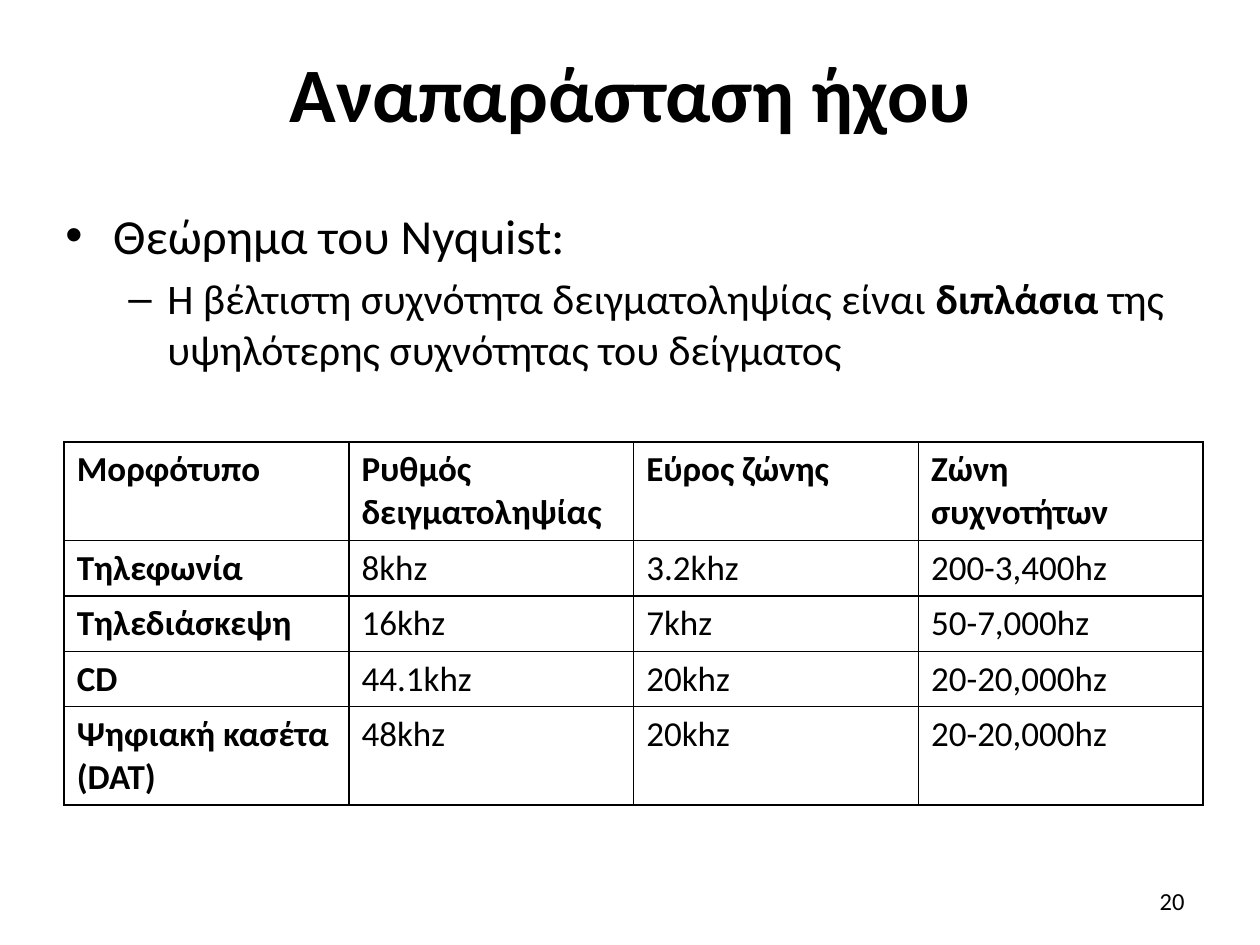
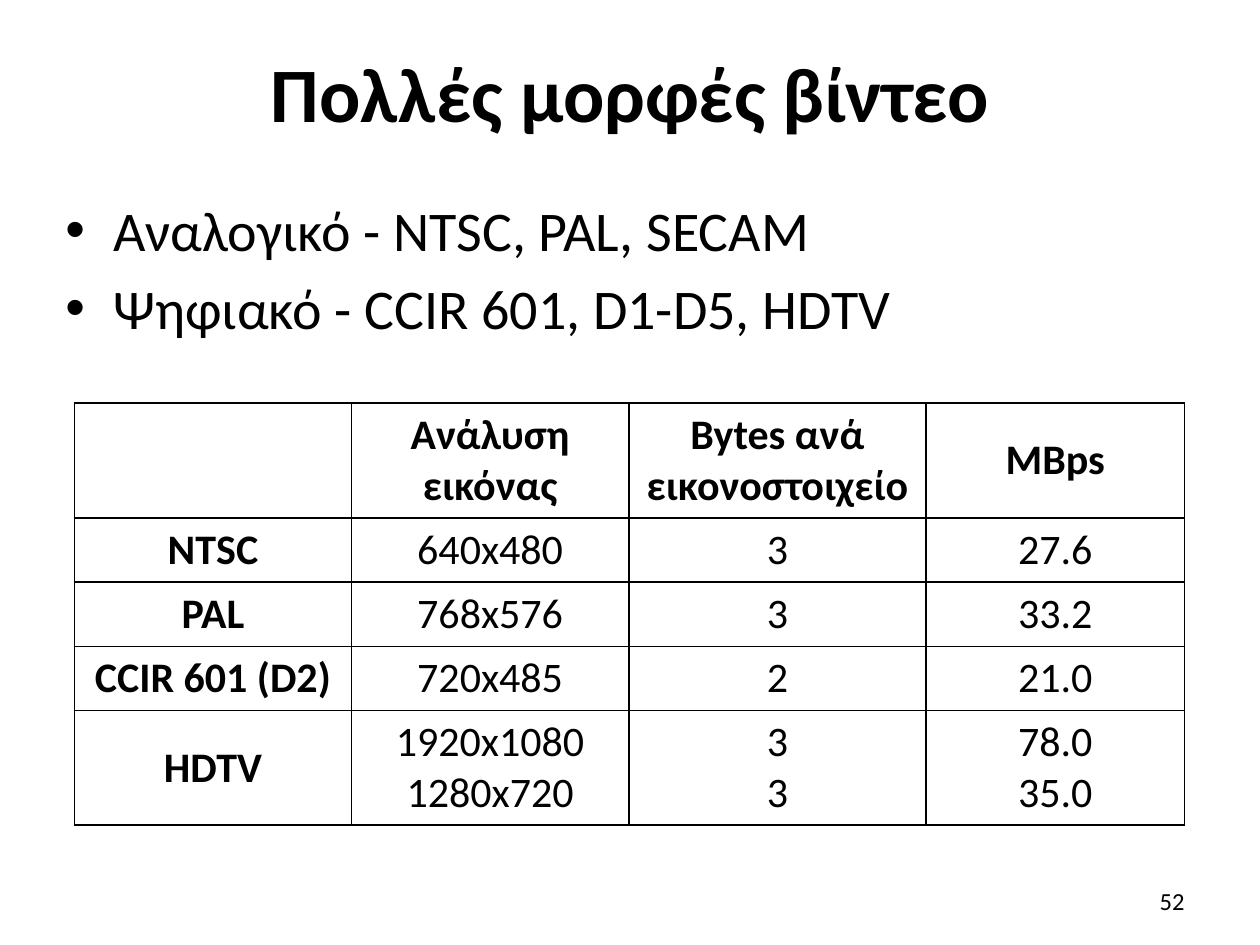
from lxml import etree
from pptx import Presentation
from pptx.dml.color import RGBColor
from pptx.enum.text import MSO_ANCHOR as Anchor, PP_ALIGN as Align
from pptx.oxml import parse_xml
from pptx.oxml.ns import nsdecls, qn
from pptx.util import Inches, Pt

FONT = "Calibri"
BLACK = "000000"
BULLETS = [("•", 0.38, -0.38), ("–", 0.81, -0.31)]  # mark, margin, indent by level

# Each bullet is (level, size, space before, runs); each run is (text, bold).
SLIDES = [
    {
        "title": "Αναπαράσταση ήχου",
        "number": "20",
        "body_top": 1.58, "body_height": 1.7,
        "bullets": [
            (0, 28, 0, [("Θεώρημα του Nyquist:", False)]),
            (1, 24, 5, [("H βέλτιστη συχνότητα δειγματοληψίας είναι ", False),
                        ("διπλάσια ", True),
                        ("της υψηλότερης συχνότητας του δείγματος", False)]),
        ],
        "table_at": (0.51, 3.51),
        "columns": [2.26] * 4,
        "row_heights": [0.78, 0.44, 0.44, 0.44, 0.78],
        "cell_size": 20, "cell_align": Align.LEFT, "cell_anchor": Anchor.TOP,
        "rows": [
            ["Μορφότυπο", "Ρυθμός δειγματοληψίας", "Εύρος ζώνης", "Ζώνη συχνοτήτων"],
            ["Τηλεφωνία", "8khz", "3.2khz", "200-3,400hz"],
            ["Τηλεδιάσκεψη", "16khz", "7khz", "50-7,000hz"],
            ["CD", "44.1khz", "20khz", "20-20,000hz"],
            ["Ψηφιακή κασέτα (DAT)", "48khz", "20khz", "20-20,000hz"],
        ],
    },
    {
        "title": "Πολλές μορφές βίντεο",
        "number": "52",
        "body_top": 1.5, "body_height": 1.5,
        "bullets": [
            (0, 32, 0, [("Αναλογικό - NTSC, PAL, SECAM", False)]),
            (0, 32, 6.4, [("Ψηφιακό - CCIR 601, D1-D5, HDTV", False)]),
        ],
        "table_at": (0.59, 3.2),
        "columns": [2.2, 2.2, 2.36, 2.05],
        "row_heights": [0.91, 0.51, 0.51, 0.51, 0.91],
        "cell_size": 24, "cell_align": Align.CENTER, "cell_anchor": Anchor.MIDDLE,
        "rows": [
            ["", "Ανάλυση εικόνας", "Bytes ανά εικονοστοιχείο", "MBps"],
            ["ΝΤSC", "640x480", "3", "27.6"],
            ["PAL", "768x576", "3", "33.2"],
            ["CCIR 601 (D2)", "720x485", "2", "21.0"],
            ["HDTV", "1920x1080\n1280x720", "3\n3", "78.0\n35.0"],
        ],
    },
]


def add_span(para, text, size, bold=False, color=BLACK):
    span = para.add_run()
    span.text = text
    span.font.name = FONT
    span.font.size = Pt(size)
    span.font.bold = bold
    span.font.color.rgb = RGBColor.from_string(color)


def add_borders(cell, color=BLACK):
    """Draw a one-point line on all four sides of the cell."""
    properties = cell._tc.get_or_add_tcPr()
    for side in ("lnL", "lnR", "lnT", "lnB"):
        properties.append(parse_xml(
            f'<a:{side} {nsdecls("a")} w="12700"><a:solidFill>'
            f'<a:srgbClr val="{color}"/></a:solidFill></a:{side}>'))


deck = Presentation()
deck.slide_width, deck.slide_height = Inches(10), Inches(7.5)

for content in SLIDES:
    page = deck.slides.add_slide(deck.slide_layouts[5])

    title = page.shapes.title
    title.left, title.top = Inches(0.42), Inches(0.12)
    title.width, title.height = Inches(9.17), Inches(1.21)
    title.text_frame.vertical_anchor = Anchor.MIDDLE
    para = title.text_frame.paragraphs[0]
    para.alignment = Align.CENTER
    add_span(para, content["title"], 44, bold=True)

    body = page.shapes.add_textbox(Inches(0.42), Inches(content["body_top"]),
                                   Inches(9.17), Inches(content["body_height"]))
    frame = body.text_frame
    frame.word_wrap = True
    for index, (level, size, space, spans) in enumerate(content["bullets"]):
        para = frame.add_paragraph() if index else frame.paragraphs[0]
        mark, margin, indent = BULLETS[level]
        properties = para._p.get_or_add_pPr()
        properties.set("marL", str(Inches(margin)))
        properties.set("indent", str(Inches(indent)))
        etree.SubElement(properties, qn("a:buFont")).set("typeface", "Arial")
        etree.SubElement(properties, qn("a:buChar")).set("char", mark)
        para.level = level
        para.space_before = Pt(space)
        for text, bold in spans:
            add_span(para, text, size, bold)

    rows, columns, heights = content["rows"], content["columns"], content["row_heights"]
    left, top = content["table_at"]
    table = page.shapes.add_table(len(rows), len(columns), Inches(left), Inches(top),
                                  Inches(sum(columns)), Inches(sum(heights))).table
    table.first_row = table.horz_banding = False
    for column, width in zip(table.columns, columns):
        column.width = Inches(width)
    for row, height in zip(table.rows, heights):
        row.height = Inches(height)
    for row_index, row in enumerate(rows):
        for column_index, text in enumerate(row):
            cell = table.cell(row_index, column_index)
            add_borders(cell)
            cell.fill.background()
            cell.vertical_anchor = content["cell_anchor"]
            is_heading = row_index == 0 or column_index == 0
            for index, line in enumerate(text.split("\n") if text else []):
                frame = cell.text_frame
                para = frame.add_paragraph() if index else frame.paragraphs[0]
                para.alignment = content["cell_align"]
                add_span(para, line, content["cell_size"], bold=is_heading)

    number = page.shapes.add_textbox(Inches(7.17), Inches(6.95), Inches(2.33), Inches(0.4))
    number.text_frame.word_wrap = True
    number.text_frame.vertical_anchor = Anchor.MIDDLE
    para = number.text_frame.paragraphs[0]
    para.alignment = Align.RIGHT
    add_span(para, content["number"], 14)

deck.save("out.pptx")
